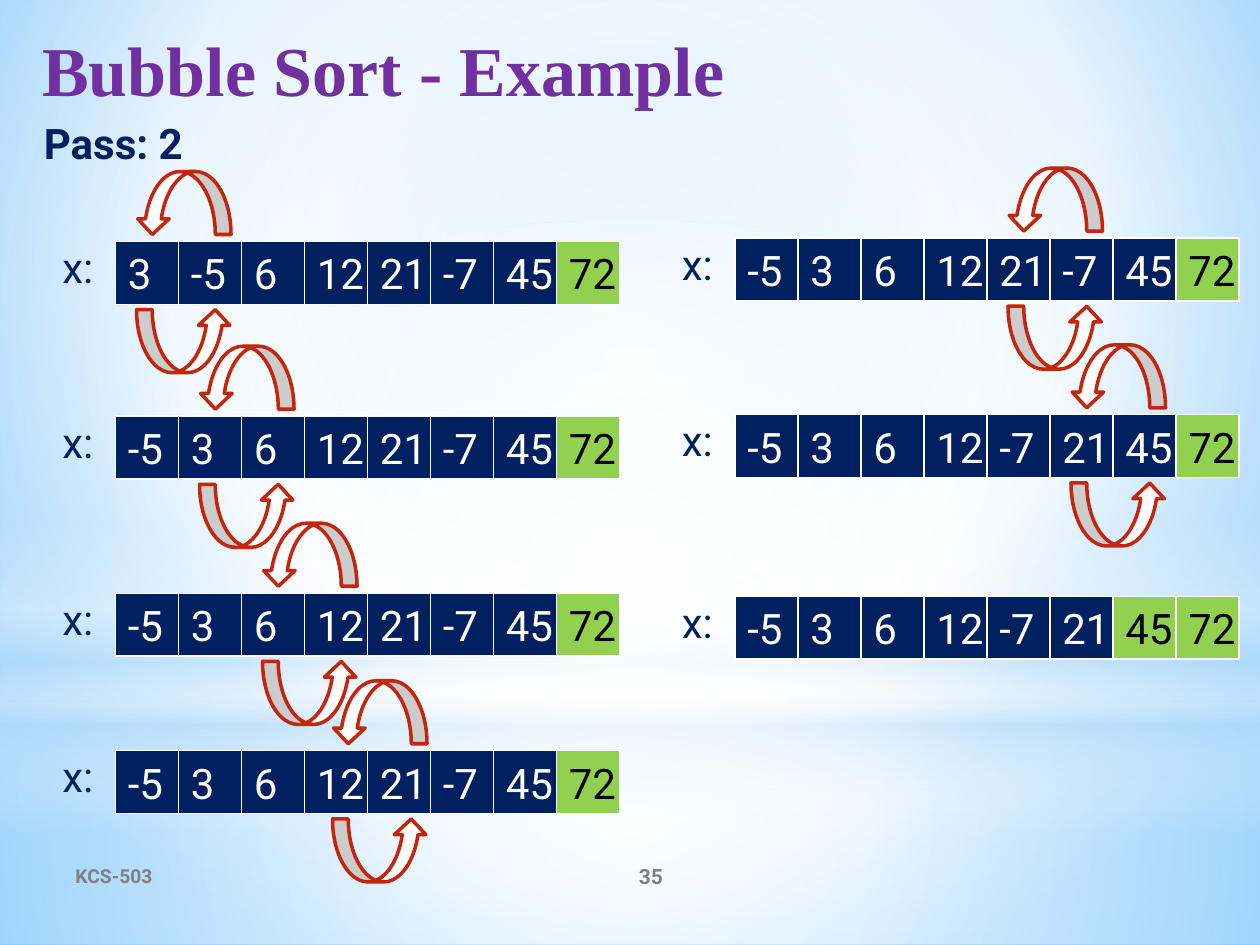
from dataclasses import dataclass
from typing import Optional

import pptx
import pptx.dml.color
import pptx.enum.shapes
import pptx.enum.text
import pptx.oxml
import pptx.oxml.ns
import pptx.util

Pt = pptx.util.Pt
SHAPE = pptx.enum.shapes.MSO_SHAPE
ALIGN = pptx.enum.text.PP_ALIGN
ANCHOR = pptx.enum.text.MSO_ANCHOR
AUTO_SIZE = pptx.enum.text.MSO_AUTO_SIZE

COLORS = {
    "title": "7030A0", "navy": "002060", "sorted": "92D050", "arrow": "C3260C",
    "footer": "808080", "white": "FFFFFF", "black": "000000",
    "sky": "9ED5FF", "deep_sky": "5BB9FF", "mist": "B4DCFA",
}
FONT = "Roboto"
CELL = 36
LEFT_X, RIGHT_X = 66, 420
CENTRE = (50, 50, 50, 50)


@dataclass
class Stop:
    pos: int
    color: str
    opacity: int = 100


@dataclass
class Layer:
    shape: int
    top: float
    height: float
    stops: list[Stop]
    focus: Optional[tuple[int, int, int, int]] = CENTRE


@dataclass
class Place:
    """Where one state of the array stands; arrow_shift moves its arrows sideways."""
    x: float
    y: float
    arrow_shift: float = 0


LAYERS = [
    Layer(SHAPE.RECTANGLE, 402, 138,
          [Stop(0, "white", 91), Stop(37, "white", 76), Stop(100, "mist", 79)]),
    Layer(SHAPE.RECTANGLE, 0, 402,
          [Stop(0, "white", 89), Stop(48, "white", 62), Stop(100, "mist", 79)]),
    Layer(SHAPE.RECTANGLE, 297, 180,
          [Stop(0, "white", 0), Stop(29, "white", 30), Stop(45, "mist", 40),
           Stop(55, "white", 26), Stop(65, "mist", 60), Stop(100, "white", 0)], None),
    Layer(SHAPE.OVAL, 126, 402, [Stop(0, "white"), Stop(56, "white", 0)]),
]
START = [3, -5, 6, 12, 21, -7, 45, 72]
ALREADY_SORTED = 1
PLACES = [
    Place(LEFT_X, 138), Place(LEFT_X, 237.8), Place(LEFT_X, 339), Place(LEFT_X, 429, 4),
    Place(RIGHT_X, 136), Place(RIGHT_X, 237), Place(RIGHT_X, 340.7),
]


def rgb(name: str) -> pptx.dml.color.RGBColor:
    return pptx.dml.color.RGBColor.from_string(COLORS[name])


def set_gradient(parent, stops: list[Stop], focus) -> None:
    """Replace the solid fill in parent; without a focus the gradient runs downwards."""
    gs = "".join(
        f'<a:gs pos="{stop.pos * 1000}"><a:srgbClr val="{COLORS[stop.color]}">'
        f'<a:alpha val="{stop.opacity * 1000}"/></a:srgbClr></a:gs>' for stop in stops)
    if focus:
        sides = " ".join(f'{side}="{v * 1000}"' for side, v in zip("ltrb", focus))
        direction = f'<a:path path="circle"><a:fillToRect {sides}/></a:path>'
    else:
        direction = '<a:lin ang="5400000" scaled="0"/>'
    grad = pptx.oxml.parse_xml(
        f'<a:gradFill {pptx.oxml.ns.nsdecls("a")} rotWithShape="1">'
        f"<a:gsLst>{gs}</a:gsLst>{direction}</a:gradFill>")
    parent.replace(parent.find(pptx.oxml.ns.qn("a:solidFill")), grad)


def add_background(s) -> None:
    s.background.fill.solid()
    set_gradient(s.element.find(".//" + pptx.oxml.ns.qn("p:bgPr")),
                 [Stop(0, "sky"), Stop(60, "white"), Stop(100, "deep_sky")],
                 (20, 10, 20, 60))
    for layer in LAYERS:
        sp = s.shapes.add_shape(layer.shape, 0, Pt(layer.top), Pt(720), Pt(layer.height))
        sp.shadow.inherit = False
        sp.line.fill.background()
        sp.fill.solid()
        set_gradient(sp.element.spPr, layer.stops, layer.focus)


def write(sp, text: str, size: float, color: str, bold: bool = False,
          align=ALIGN.LEFT, anchor=ANCHOR.TOP, wrap: bool = True, font: str = FONT) -> None:
    tf = sp.text_frame
    tf.word_wrap = wrap
    tf.vertical_anchor = anchor
    p = tf.paragraphs[0]
    p.text = text
    p.alignment = align
    p.font.name = font
    p.font.size = Pt(size)
    p.font.bold = bold
    p.font.color.rgb = rgb(color)


def add_text(shapes, x: float, y: float, w: float, h: float, text: str,
             size: float, color: str, **style):
    sp = shapes.add_textbox(Pt(x), Pt(y), Pt(w), Pt(h))
    write(sp, text, size, color, **style)
    return sp


def add_array(s, place: Place, values: list[int], sorted_count: int) -> None:
    shapes = s.shapes.add_group_shape().shapes
    for i, value in enumerate(values):
        done = i >= len(values) - sorted_count
        sp = shapes.add_shape(SHAPE.RECTANGLE, Pt(place.x + i * CELL), Pt(place.y),
                              Pt(CELL), Pt(CELL))
        sp.shadow.inherit = False
        sp.fill.solid()
        sp.fill.fore_color.rgb = rgb("sorted" if done else "navy")
        sp.line.color.rgb = rgb("white")
        sp.line.width = Pt(0.75)
        write(sp, str(value), 24, "black" if done else "white",
              anchor=ANCHOR.MIDDLE, wrap=False)
    label = add_text(shapes, place.x - 37.5, place.y - 3.4, 34.5, 36, "x:", 24, "navy",
                     wrap=False)
    label.text_frame.auto_size = AUTO_SIZE.SHAPE_TO_FIT_TEXT


def add_swap_arrows(s, place: Place, index: int) -> None:
    x = place.x + index * CELL + 12 + place.arrow_shift
    for dy, rotation in ((39, 0), (-40, 180)):
        sp = s.shapes.add_shape(SHAPE.CURVED_UP_ARROW, Pt(x), Pt(place.y + dy),
                                Pt(54), Pt(36))
        sp.rotation = rotation
        sp.shadow.inherit = False
        sp.fill.solid()
        sp.fill.fore_color.rgb = rgb("white")
        sp.line.color.rgb = rgb("arrow")
        sp.line.width = Pt(2)


def add_pass(s) -> None:
    """Draw the array before each comparison of the pass, and once after the last."""
    values = list(START)
    for i, place in enumerate(PLACES[:-1]):
        add_array(s, place, values, ALREADY_SORTED)
        add_swap_arrows(s, place, i)
        values[i:i + 2] = sorted(values[i:i + 2])
    add_array(s, PLACES[-1], values, ALREADY_SORTED + 1)


def main() -> None:
    prs = pptx.Presentation()
    prs.slide_width, prs.slide_height = Pt(720), Pt(540)
    s = prs.slides.add_slide(prs.slide_layouts[5])
    add_background(s)

    title = s.shapes.title
    title.left, title.top, title.width, title.height = Pt(17), Pt(6), Pt(686), Pt(66)
    write(title, "Bubble Sort - Example", 40, "title", bold=True,
          anchor=ANCHOR.MIDDLE, font="Times New Roman")
    s.shapes.element.append(title.element)  # in front of the background layers

    add_text(s.shapes, 36, 486, 264, 29, "KCS-503", 11, "footer", bold=True,
             anchor=ANCHOR.MIDDLE)
    add_text(s.shapes, 300, 486, 144, 29, "35", 12, "footer", bold=True,
             align=ALIGN.CENTER, anchor=ANCHOR.MIDDLE)
    heading = add_text(s.shapes, 18, 63.5, 102, 36, "Pass: 2", 24, "navy", bold=True)
    heading.text_frame.auto_size = AUTO_SIZE.SHAPE_TO_FIT_TEXT
    add_pass(s)
    prs.save("out.pptx")


if __name__ == "__main__":
    main()
